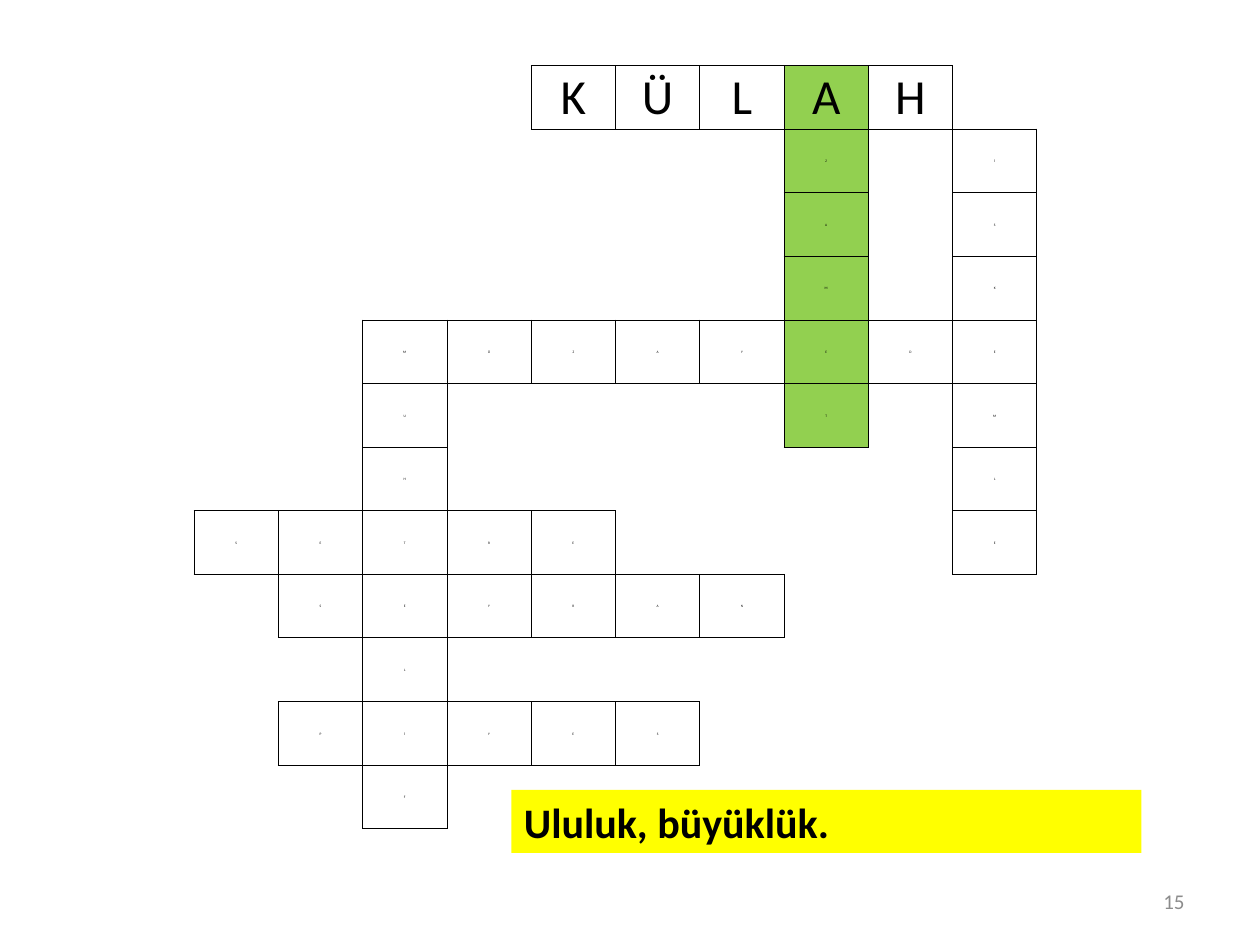
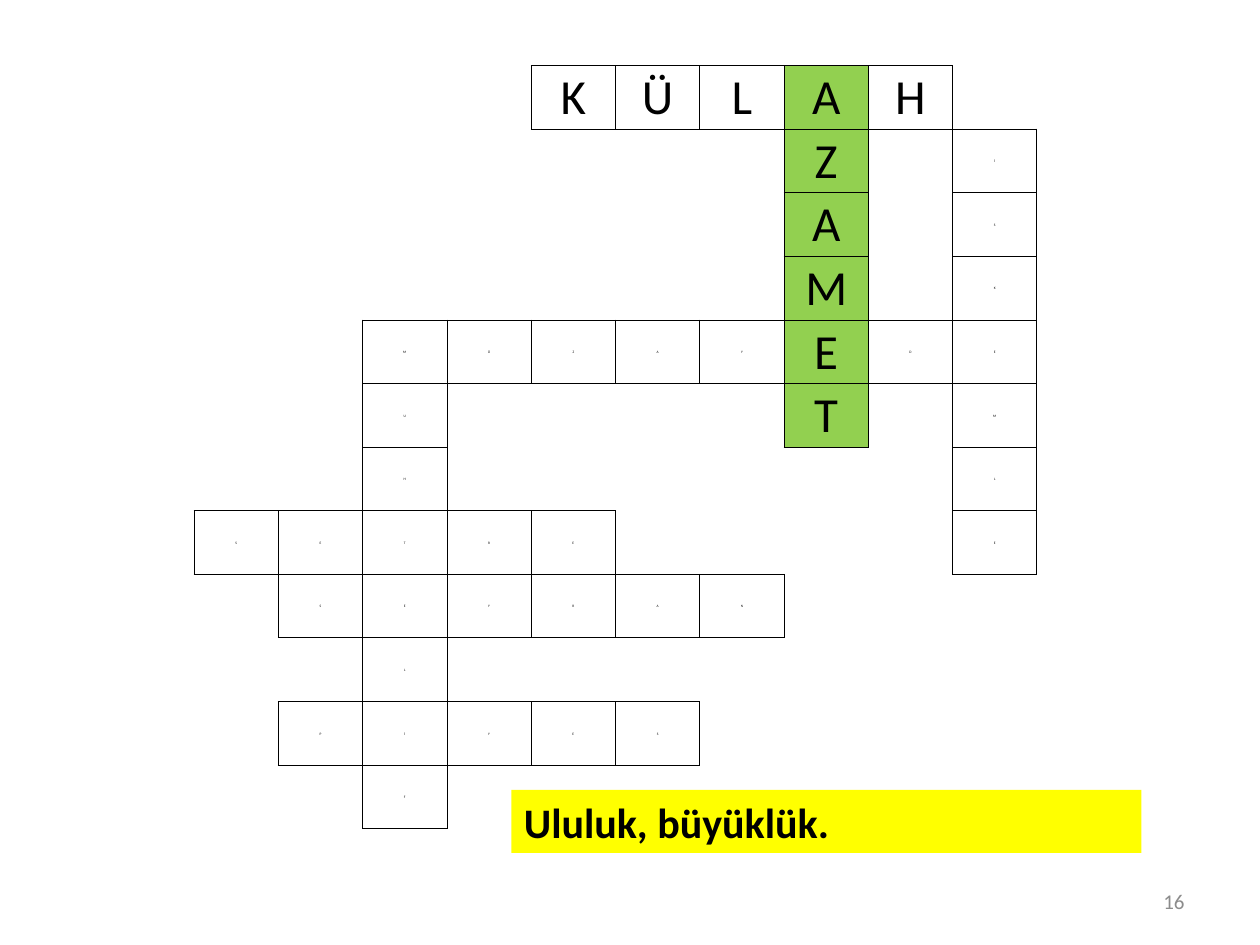
from lxml.etree import SubElement
from pptx import Presentation
from pptx.dml.color import RGBColor
from pptx.enum.shapes import MSO_SHAPE
from pptx.enum.text import MSO_ANCHOR, PP_ALIGN
from pptx.oxml.ns import qn
from pptx.util import Inches, Pt

FONT = "Calibri"
BLACK, GRAY, GREEN, YELLOW = "000000", "8C8C8C", "92D050", "FFFF00"
SOLVED_SIZE, HIDDEN_SIZE = 28, 2
LINE_WIDTH = 0.5
PUZZLE = [
    "....KÜLAH.",
    ".......Z.İ",
    ".......A.S",
    ".......M.K",
    "..MÜZAYEDE",
    "..U....T.M",
    "..H......L",
    "SETRE....E",
    ".SEYRAN...",
    "..L.......",
    ".PİYES....",
    "..F.......",
]
KULAH = {(0, column) for column in range(4, 9)}
AZAMET = {(row, 7) for row in range(6)}
SIDES = {"a:lnL": (0, -1), "a:lnR": (0, 1), "a:lnT": (-1, 0), "a:lnB": (1, 0)}
CLUE = "Ululuk, büyüklük."
SLIDES = [("15", KULAH), ("16", KULAH | AZAMET)]


def color(value):
    """Turn a hex string into a colour."""
    return RGBColor.from_string(value)


def style_paragraph(paragraph, size, font_color=BLACK, alignment=PP_ALIGN.LEFT, bold=False):
    """Set the font and alignment of a paragraph."""
    paragraph.alignment = alignment
    paragraph.font.name = FONT
    paragraph.font.size = Pt(size)
    paragraph.font.bold = bold
    paragraph.font.color.rgb = color(font_color)


def letter_at(row, column):
    """Return the letter of a square, or an empty string outside the words."""
    if 0 <= row < len(PUZZLE) and 0 <= column < len(PUZZLE[0]):
        return PUZZLE[row][column].strip(".")
    return ""


def draw_borders(cell, row, column):
    """Line each side that touches a letter and clear the others."""
    properties = cell._tc.get_or_add_tcPr()
    for tag, (row_step, column_step) in SIDES.items():
        line = SubElement(properties, qn(tag), w=str(Pt(LINE_WIDTH)))
        if letter_at(row, column) or letter_at(row + row_step, column + column_step):
            fill = SubElement(line, qn("a:solidFill"))
            SubElement(fill, qn("a:srgbClr"), val=BLACK)
        else:
            SubElement(line, qn("a:noFill"))


def fill_square(cell, row, column, solved):
    """Draw one square of the crossword."""
    draw_borders(cell, row, column)
    if (row, column) in AZAMET:
        cell.fill.solid()
        cell.fill.fore_color.rgb = color(GREEN)
    else:
        cell.fill.background()
    letter = letter_at(row, column)
    if letter:
        cell.text = letter
        cell.vertical_anchor = MSO_ANCHOR.MIDDLE
        cell.margin_left = cell.margin_top = cell.margin_right = Inches(0.01)
        cell.margin_bottom = 0
        size = SOLVED_SIZE if (row, column) in solved else HIDDEN_SIZE
        style_paragraph(cell.text_frame.paragraphs[0], size, alignment=PP_ALIGN.CENTER)


def add_crossword(slide, left, top, width, height, solved):
    """Add the crossword, showing the solved squares in large letters."""
    row_count, column_count = len(PUZZLE), len(PUZZLE[0])
    table = slide.shapes.add_table(
        row_count, column_count, Inches(left), Inches(top), Inches(width), Inches(height)
    ).table
    table.first_row = table.horz_banding = False
    for row in range(row_count):
        for column in range(column_count):
            fill_square(table.cell(row, column), row, column, solved)


def add_clue(slide, left, top, width, height):
    """Add the yellow band with the clue."""
    band = slide.shapes.add_shape(
        MSO_SHAPE.RECTANGLE, Inches(left), Inches(top), Inches(width), Inches(height)
    )
    band.shadow.inherit = False
    band.fill.solid()
    band.fill.fore_color.rgb = color(YELLOW)
    band.line.fill.background()
    frame = band.text_frame
    frame.word_wrap = True
    frame.vertical_anchor = MSO_ANCHOR.TOP
    frame.text = CLUE
    style_paragraph(frame.paragraphs[0], 24, bold=True)


def add_page_number(slide, left, top, width, height, number):
    """Add the page number at the lower right."""
    box = slide.shapes.add_textbox(Inches(left), Inches(top), Inches(width), Inches(height))
    frame = box.text_frame
    frame.word_wrap = True
    frame.vertical_anchor = MSO_ANCHOR.MIDDLE
    frame.text = number
    style_paragraph(frame.paragraphs[0], 12, GRAY, PP_ALIGN.RIGHT)


def add_puzzle_slide(presentation, number, solved):
    """Add a slide with the crossword, its clue and the page number."""
    slide = presentation.slides.add_slide(presentation.slide_layouts[6])
    add_page_number(slide, 7.17, 6.95, 2.33, 0.4, number)
    add_crossword(slide, 1.54, 0.52, 6.69, 6.06, solved)
    add_clue(slide, 4.06, 6.27, 5, 0.5)


def main():
    """Build and save the presentation."""
    presentation = Presentation()
    presentation.slide_width = Inches(10)
    presentation.slide_height = Inches(7.5)
    for number, solved in SLIDES:
        add_puzzle_slide(presentation, number, solved)
    presentation.save("out.pptx")


if __name__ == "__main__":
    main()
